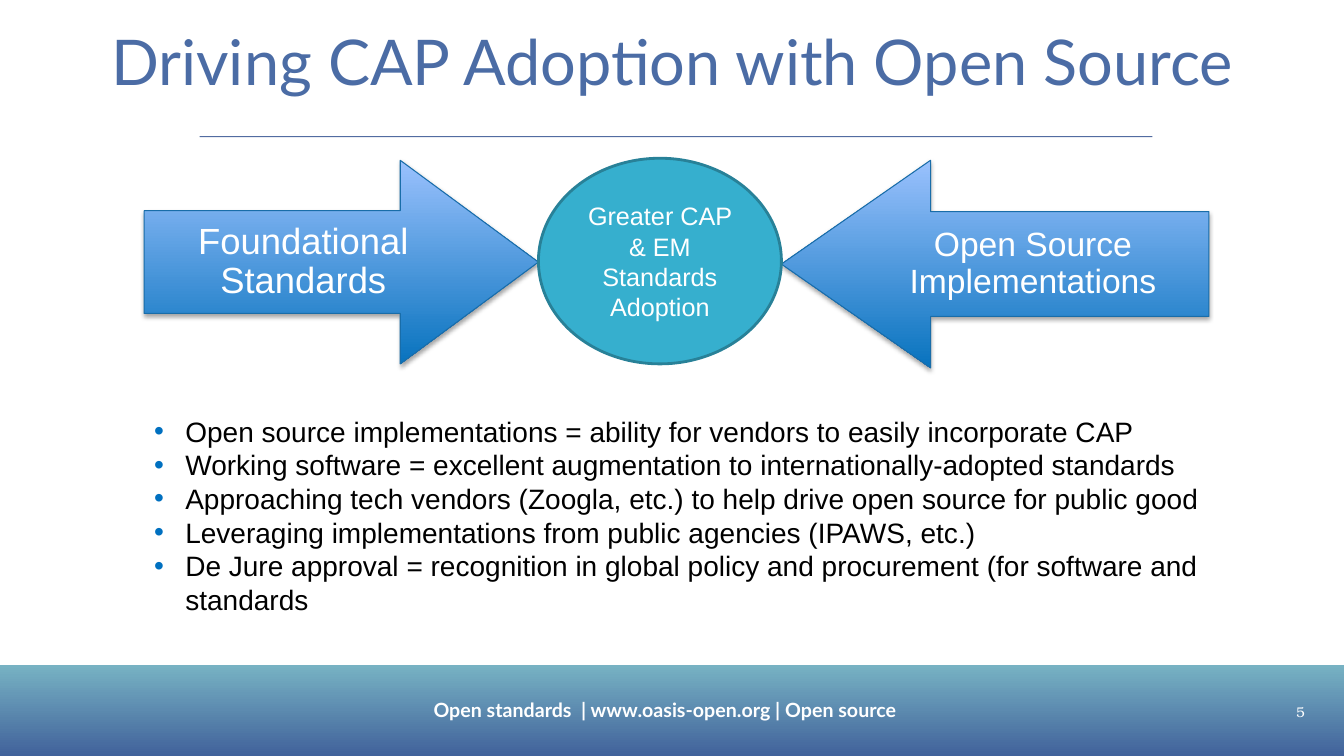
from lxml.etree import SubElement
from pptx import Presentation
from pptx.dml.color import RGBColor
from pptx.enum.shapes import MSO_SHAPE
from pptx.enum.text import MSO_ANCHOR, PP_ALIGN
from pptx.oxml.ns import qn
from pptx.util import Pt

PX = 9144  # EMU per px, 100 px to the inch

WHITE = RGBColor(0xFF, 0xFF, 0xFF)
BLACK = RGBColor(0x00, 0x00, 0x00)
TITLE_BLUE = RGBColor(0x4B, 0x6C, 0xA5)
RULE_BLUE = RGBColor(0x52, 0x6C, 0xA1)
BULLET_BLUE = RGBColor(0x00, 0x70, 0xC0)
ARROW_TOP = RGBColor(0x9A, 0xC1, 0xFD)
ARROW_BOTTOM = RGBColor(0x08, 0x73, 0xBE)
ARROW_EDGE = RGBColor(0x19, 0x6D, 0xA9)
GOAL_TEAL = RGBColor(0x36, 0xAF, 0xCE)
GOAL_EDGE = RGBColor(0x28, 0x81, 0x98)
FOOTER_TOP = RGBColor(0x77, 0xB2, 0xC3)
FOOTER_BOTTOM = RGBColor(0x41, 0x62, 0x9B)

POINTS = [
    "Open source implementations = ability for vendors to easily incorporate CAP",
    "Working software = excellent augmentation to internationally-adopted standards",
    "Approaching tech vendors (Zoogla, etc.) to help drive open source for public good",
    "Leveraging implementations from public agencies (IPAWS, etc.)",
    "De Jure approval = recognition in global policy and procurement (for software and standards",
]


def emu(*lengths):
    return [v * PX for v in lengths]


def write(sp, *lines, size, font="Arial", color=WHITE, bold=False, align=PP_ALIGN.LEFT,
          anchor=MSO_ANCHOR.TOP, insets=(5, 5, 5, 5), spacing=None, bullet=None):
    """Fill a shape with one paragraph per line; insets run left, top, right, bottom."""
    tf = sp.text_frame
    tf.word_wrap = True
    tf.vertical_anchor = anchor
    tf.margin_left, tf.margin_top, tf.margin_right, tf.margin_bottom = emu(*insets)
    for i, line in enumerate(lines):
        p = tf.add_paragraph() if i else tf.paragraphs[0]
        p.alignment = align
        p.line_spacing = spacing
        if bullet:
            add_bullet(p, bullet, indent=31)
        r = p.add_run()
        r.text = line
        r.font.name, r.font.size, r.font.bold = font, Pt(size), bold
        r.font.color.rgb = color


def add_bullet(p, color, indent):
    pPr = p._p.get_or_add_pPr()
    pPr.set("marL", str(indent * PX))
    pPr.set("indent", str(-indent * PX))
    SubElement(SubElement(pPr, qn("a:buClr")), qn("a:srgbClr"), val=str(color))
    SubElement(pPr, qn("a:buFont"), typeface="Arial")
    SubElement(pPr, qn("a:buChar"), char="•")


def add_text(s, box, *lines, **style):
    write(s.shapes.add_textbox(*emu(*box)), *lines, **style)


def add_preset(s, kind, box):
    sp = s.shapes.add_shape(kind, *emu(*box))
    sp.shadow.inherit = False
    sp.line.fill.background()
    return sp


def fill_downward(sp, top, bottom):
    sp.fill.gradient()
    sp.fill.gradient_angle = 270
    for stop, color in zip(sp.fill.gradient_stops, (top, bottom)):
        stop.color.rgb = color


def add_drop_shadow(sp):
    sp.shadow.inherit = False
    effects = sp._element.spPr.find(qn("a:effectLst"))
    shadow = SubElement(effects, qn("a:outerShdw"), blurRad=str(Pt(3.1)),
                        dist=str(Pt(1.8)), dir="5400000", rotWithShape="0")
    color = SubElement(shadow, qn("a:srgbClr"), val=str(BLACK))
    SubElement(color, qn("a:alpha"), val="35000")


def add_arrow(s, box, head, text, size, to_left=False):
    """Draw a block arrow whose shaft is half as high as its head."""
    x, y, w, h = box
    notch = h // 4
    neck = w - head
    outline = [(neck, h), (neck, h - notch), (0, h - notch), (0, notch),
               (neck, notch), (neck, 0), (w, h // 2)]
    points = [(x + (w - dx if to_left else dx), y + dy) for dx, dy in outline]
    builder = s.shapes.build_freeform(*points[0], scale=PX)
    builder.add_line_segments(points[1:], close=True)
    sp = builder.convert_to_shape()
    fill_downward(sp, ARROW_TOP, ARROW_BOTTOM)
    sp.line.color.rgb = ARROW_EDGE
    sp.line.width = Pt(0.75)
    add_drop_shadow(sp)
    write(sp, text, size=size, align=PP_ALIGN.CENTER, anchor=MSO_ANCHOR.MIDDLE,
          insets=(95, 0, 20, 0) if to_left else (20, 0, 95, 0), spacing=0.9)


def add_footer(s, box):
    x, y, w, h = box
    fill_downward(add_preset(s, MSO_SHAPE.RECTANGLE, box), FOOTER_TOP, FOOTER_BOTTOM)
    add_text(s, (x + 425, y + 27, 500, 34),
             "Open standards  | www.oasis-open.org | Open source",
             size=14, font="Lato", bold=True)
    add_text(s, (x + w - 62, y + 34, 28, 24), "5", size=10, font="TeX Gyre Bonum",
             align=PP_ALIGN.RIGHT, anchor=MSO_ANCHOR.MIDDLE)


def add_header(s, box):
    x, y, w, h = box
    add_text(s, (x, y, w, 88), "Driving CAP Adoption with Open Source", size=45,
             font="Lato", color=TITLE_BLUE, align=PP_ALIGN.CENTER, spacing=0.9)
    rule = add_preset(s, MSO_SHAPE.RECTANGLE, (x + 122, y + h - 1, 945, 1))
    rule.fill.solid()
    rule.fill.fore_color.rgb = RULE_BLUE


def add_convergence(s, box):
    """Place two arrows that point at the goal between them."""
    x, y, w, h = box
    left_w, goal_w = 391, 241
    right_x = left_w + goal_w
    add_arrow(s, (x, y + 2, left_w, 202), 137, "Foundational Standards", 26)
    add_arrow(s, (x + right_x, y + 2, w - right_x, 206), 148,
              "Open Source Implementations", 24, to_left=True)
    goal = add_preset(s, MSO_SHAPE.OVAL, (x + left_w, y, goal_w, h - 4))
    goal.fill.solid()
    goal.fill.fore_color.rgb = GOAL_TEAL
    goal.line.color.rgb = GOAL_EDGE
    goal.line.width = Pt(2)
    write(goal, "Greater CAP & EM Standards Adoption", size=18, align=PP_ALIGN.CENTER,
          anchor=MSO_ANCHOR.MIDDLE, insets=(10, 5, 10, 5))


def main():
    prs = Presentation()
    prs.slide_width, prs.slide_height = emu(1333, 750)
    s = prs.slides.add_slide(prs.slide_layouts[6])
    add_footer(s, (0, 660, 1333, 90))
    add_header(s, (76, 26, 1181, 110))
    add_text(s, (143, 406, 1070, 212), *POINTS, size=20, color=BLACK,
             insets=(10, 5, 10, 5), bullet=BULLET_BLUE)
    add_convergence(s, (143, 157, 1056, 208))
    prs.save("out.pptx")


if __name__ == "__main__":
    main()
